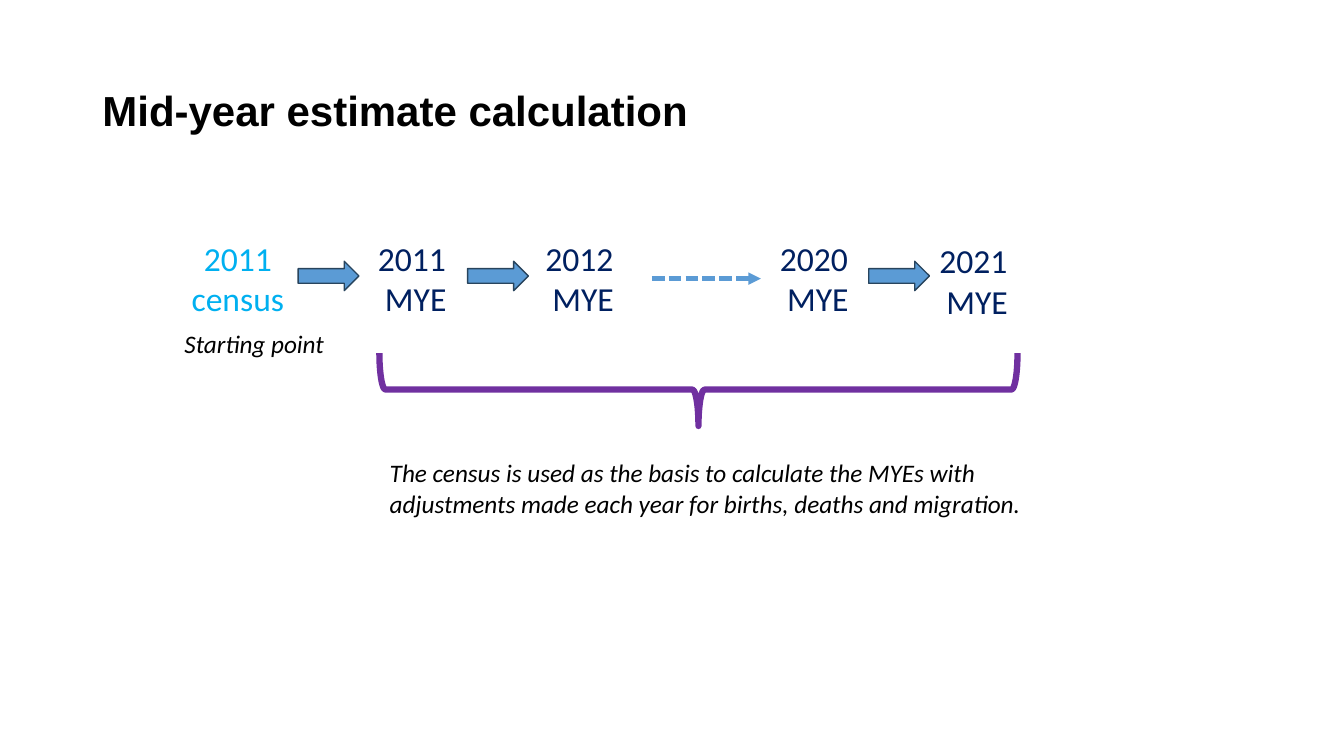
from lxml import etree
from pptx import Presentation
from pptx.dml.color import RGBColor
from pptx.enum.dml import MSO_LINE
from pptx.enum.shapes import MSO_CONNECTOR, MSO_SHAPE
from pptx.enum.text import MSO_ANCHOR, MSO_AUTO_SIZE, PP_ALIGN
from pptx.oxml.ns import qn
from pptx.util import Pt

ARROW = MSO_SHAPE.RIGHT_ARROW
BRACE = MSO_SHAPE.RIGHT_BRACE
LINE = MSO_CONNECTOR.STRAIGHT
DASH = MSO_LINE.SQUARE_DOT
LEFT, CENTER = PP_ALIGN.LEFT, PP_ALIGN.CENTER
MIDDLE = MSO_ANCHOR.MIDDLE
GROW = MSO_AUTO_SIZE.SHAPE_TO_FIT_TEXT

BLUE, NAVY, BLACK = "5B9BD5", "002060", "000000"
TITLE = {"name": "Arial", "size": Pt(30), "bold": True}
YEAR = {"name": "Calibri", "size": Pt(24)}
NOTE = {"name": "Calibri", "size": Pt(18), "italic": True}


def color(target, code):
    target.rgb = RGBColor.from_string(code)


def style(para, form, code, align):
    para.alignment = align
    for key, value in form.items():
        setattr(para.font, key, value)
    color(para.font.color, code)


def label(shapes, box, lines, form, code, align=LEFT):
    shape = shapes.add_textbox(*map(Pt, box))
    frame = shape.text_frame
    frame.word_wrap = True
    frame.auto_size = GROW
    frame.text = "\n".join(lines)
    for para in frame.paragraphs:
        style(para, form, code, align)


def outline(shape, code, width):
    color(shape.line.color, code)
    shape.line.width = Pt(width)


def arrow(shapes, box):
    shape = shapes.add_shape(ARROW, *map(Pt, box))
    shape.shadow.inherit = False
    shape.fill.solid()
    color(shape.fill.fore_color, BLUE)
    outline(shape, "28445D", 1)


def gap(shapes, left, right, y):
    link = shapes.add_connector(LINE, Pt(left), Pt(y), Pt(right), Pt(y))
    outline(link, BLUE, 3)
    link.line.dash_style = DASH
    props = link._element.spPr
    tail = etree.SubElement(props.find(qn("a:ln")), qn("a:tailEnd"))
    tail.set("type", "triangle")
    etree.SubElement(props, qn("a:effectLst"))


def brace(shapes, box):
    left, top, width, height = box
    shift = (width - height) / 2
    shape = shapes.add_shape(
        BRACE, Pt(left + shift), Pt(top - shift), Pt(height), Pt(width))
    shape.rotation = 90
    shape.shadow.inherit = False
    shape.fill.background()
    outline(shape, "7030A0", 4.5)


def heading(slide, box):
    title = slide.shapes.title
    title.left, title.top, title.width, title.height = map(Pt, box)
    frame = title.text_frame
    frame.text = "Mid-year estimate calculation"
    frame.vertical_anchor = MIDDLE
    frame.word_wrap = True
    para = frame.paragraphs[0]
    para.line_spacing = 0.9
    style(para, TITLE, BLACK, LEFT)


def flow(slide, box):
    left, top, width, height = box
    shapes = slide.shapes.add_group_shape().shapes
    label(shapes, (left + 2, top, 86.4, 65.4), (" 2011 ", "census"),
          YEAR, "00B0F0", CENTER)
    years = ((2011, 136.6, 0), (2012, 256.2, 0),
             (2020, 423.8, 0), (2021, 537.6, 1.7))
    for year, x, drop in years:
        label(shapes, (left + x, top + drop, 71.3, 65.4),
              (f"{year} ", "MYE"), YEAR, NAVY, CENTER)
    for x in (88.3, 209.3, 495.8):
        arrow(shapes, (left + x, top + 20.3, 43.4, 21))
    gap(shapes, left + 341, left + 418.8, top + 32.7)
    label(shapes, (left, top + 65, 121, 29), ("Starting point",), NOTE, BLACK)
    brace(shapes, (left + 146.3, top + 86, 455.8, 52))
    label(shapes, (left + 146.6, top + height - 51, width - 146.6, 51),
          ("The census is used as the basis to calculate the MYEs with "
           "adjustments made each year for births, deaths and migration.",),
          NOTE, BLACK)


def main():
    deck = Presentation()
    deck.slide_width, deck.slide_height = Pt(960), Pt(540)
    slide = deck.slides.add_slide(deck.slide_layouts[5])
    heading(slide, (66, 29, 828, 104))
    flow(slide, (124.7, 166.3, 651.3, 208))
    deck.save("out.pptx")


if __name__ == "__main__":
    main()
